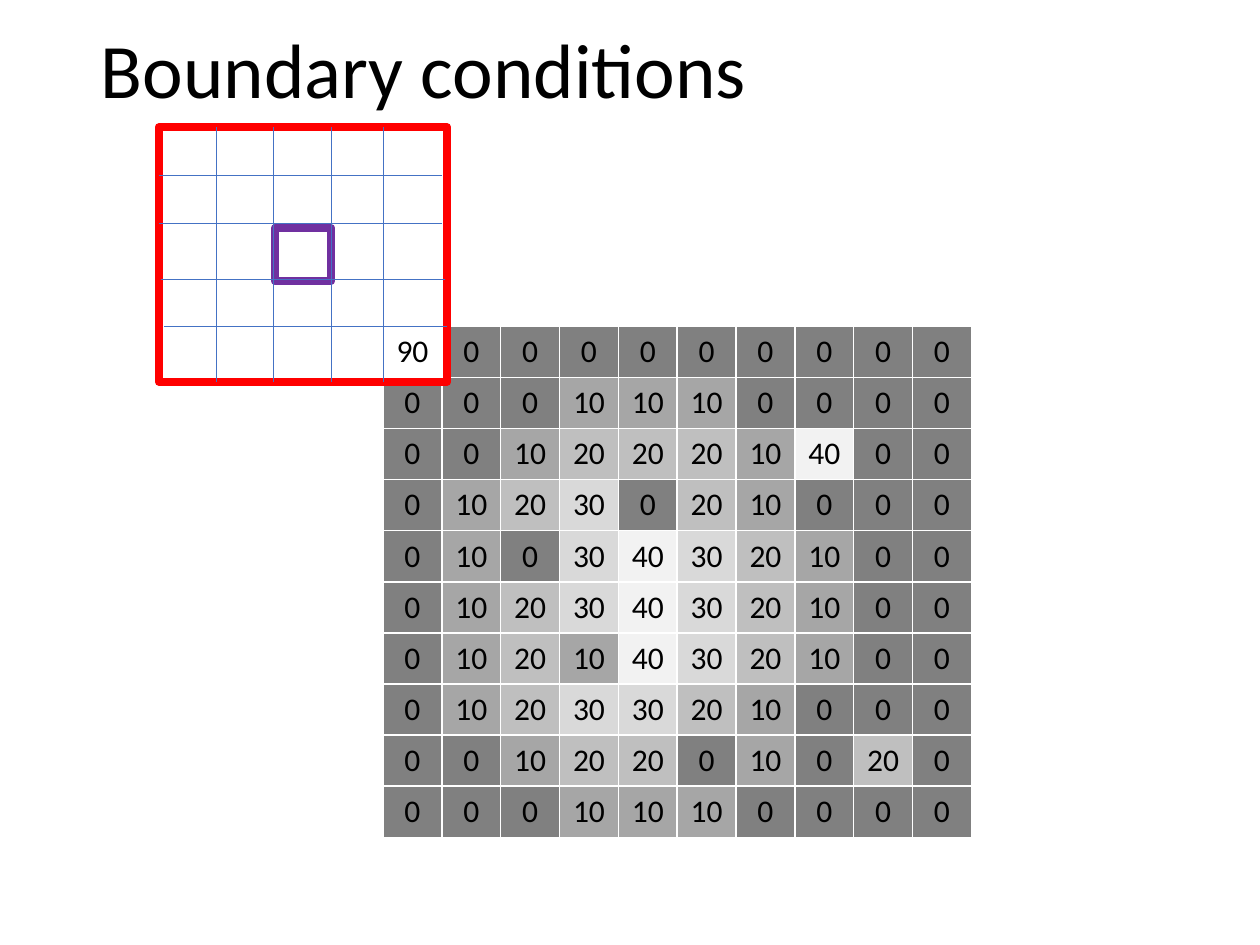
from pptx import Presentation
from pptx.dml.color import RGBColor as RGB
from pptx.enum.shapes import MSO_CONNECTOR as Link, MSO_SHAPE as Shape
from pptx.enum.text import MSO_ANCHOR as Anchor, PP_ALIGN as Align
from pptx.oxml import parse_xml
from pptx.oxml.ns import nsdecls
from pptx.util import Inches, Pt

SHADES = {0: "808080", 10: "A6A6A6", 20: "BFBFBF", 30: "D9D9D9",
          40: "F2F2F2", 90: "FFFFFF"}
PIXELS = [
    [90, 0, 0, 0, 0, 0, 0, 0, 0, 0],
    [0, 0, 0, 10, 10, 10, 0, 0, 0, 0],
    [0, 0, 10, 20, 20, 20, 10, 40, 0, 0],
    [0, 10, 20, 30, 0, 20, 10, 0, 0, 0],
    [0, 10, 0, 30, 40, 30, 20, 10, 0, 0],
    [0, 10, 20, 30, 40, 30, 20, 10, 0, 0],
    [0, 10, 20, 10, 40, 30, 20, 10, 0, 0],
    [0, 10, 20, 30, 30, 20, 10, 0, 0, 0],
    [0, 0, 10, 20, 20, 0, 10, 0, 20, 0],
    [0, 0, 0, 10, 10, 10, 0, 0, 0, 0],
]


def color(code):
    return RGB.from_string(code)


def write(frame, text, size=18, tint="000000", align=Align.CENTER, gap=1.0):
    para = frame.paragraphs[0]
    para.alignment = align
    para.line_spacing = gap
    run = para.add_run()
    run.text = text
    run.font.size = Pt(size)
    run.font.name = "Calibri"
    run.font.color.rgb = color(tint)


def add_title(slide, x, y, w, h):
    title = slide.shapes.title
    title.left, title.top = Inches(x), Inches(y)
    title.width, title.height = Inches(w), Inches(h)
    title.text_frame.vertical_anchor = Anchor.MIDDLE
    write(title.text_frame, "Boundary conditions", size=44,
          align=Align.LEFT, gap=0.9)


def edge(cell, tint="FFFFFF", width=1):
    props = cell._tc.get_or_add_tcPr()
    for i, side in enumerate(("lnL", "lnR", "lnT", "lnB")):
        props.insert(i, parse_xml(
            f'<a:{side} {nsdecls("a")} w="{Pt(width)}"><a:solidFill>'
            f'<a:srgbClr val="{tint}"/></a:solidFill></a:{side}>'))


def add_pixels(slide, x, y, w, h):
    count = len(PIXELS)
    frame = slide.shapes.add_table(count, count, Inches(x), Inches(y),
                                   Inches(w), Inches(h))
    table = frame.table
    table.first_row = table.horz_banding = False
    for r, values in enumerate(PIXELS):
        for c, value in enumerate(values):
            cell = table.cell(r, c)
            cell.fill.solid()
            cell.fill.fore_color.rgb = color(SHADES[value])
            write(cell.text_frame, str(value))
            edge(cell)


def add_frame(slide, x, y, w, h, tint):
    box = slide.shapes.add_shape(Shape.RECTANGLE, Inches(x), Inches(y),
                                 Inches(w), Inches(h))
    box.shadow.inherit = False
    box.fill.background()
    box.line.color.rgb = color(tint)
    box.line.width = Pt(4.5)


def add_line(slide, x1, y1, x2, y2):
    line = slide.shapes.add_connector(Link.STRAIGHT, Inches(x1), Inches(y1),
                                      Inches(x2), Inches(y2))
    line.line.color.rgb = color("4472C4")
    line.line.width = Pt(0.5)
    line._element.spPr.append(parse_xml(f'<a:effectLst {nsdecls("a")}/>'))


def add_kernel(slide, x, y, w, h):
    # Centre cell, then the outer window
    add_frame(slide, x + 0.92, y + 0.8, 0.45, 0.42, "7030A0")
    add_frame(slide, x, y, w, h, "FF0000")
    # Inner grid lines
    for dx in (1.78, 1.37, 0.91, 0.46):
        add_line(slide, x + dx, y + h, x + dx, y)
    for dy, shift in ((0.38, 0), (0.76, 0), (1.21, 0.02), (1.58, 0.04)):
        add_line(slide, x + shift + 2.25, y + dy, x + shift, y + dy)


def main():
    deck = Presentation()
    deck.slide_width, deck.slide_height = Inches(10), Inches(7.5)
    slide = deck.slides.add_slide(deck.slide_layouts[5])
    add_title(slide, 0.7, -0.14, 8.62, 1.45)
    add_pixels(slide, 3.04, 2.59, 4.67, 4)
    add_kernel(slide, 1.26, 1.01, 2.29, 2.02)
    deck.save("out.pptx")


if __name__ == "__main__":
    main()
